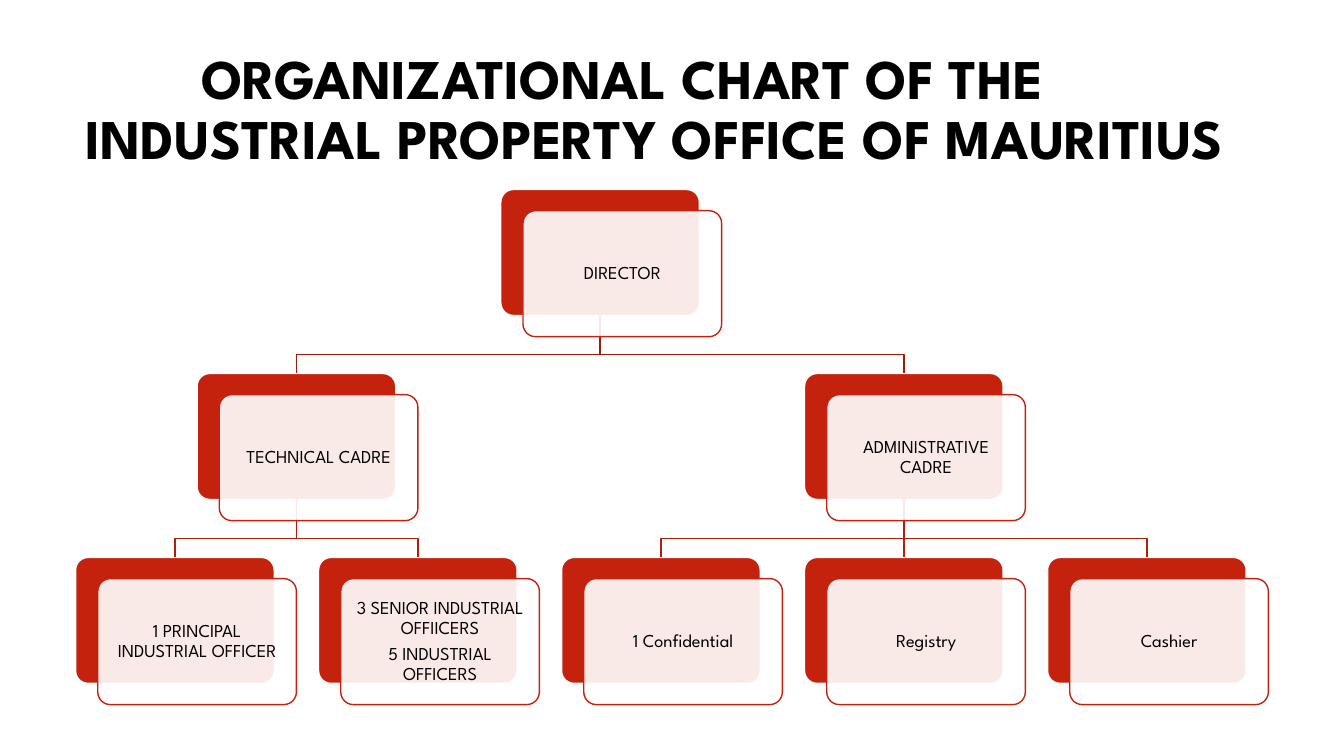
import pptx
import pptx.util
import pptx.dml.color
import pptx.enum.shapes
import pptx.enum.text
import pptx.oxml
import pptx.oxml.ns
import lxml.etree

Inches = pptx.util.Inches
Pt = pptx.util.Pt

# Content
TITLE = "ORGANIZATIONAL CHART OF THE INDUSTRIAL PROPERTY OFFICE OF MAURITIUS"
# key: (column, row, parent, paragraphs)
POSTS = {
    "head": (1.75, 0, None, ["DIRECTOR"]),
    "tech": (0.5, 1, "head", ["TECHNICAL CADRE"]),
    "chief": (0, 2, "tech", ["1 PRINCIPAL INDUSTRIAL OFFICER"]),
    "staff": (1, 2, "tech", ["3 SENIOR INDUSTRIAL OFFIICERS",
                             "5 INDUSTRIAL OFFICERS"]),
    "admin": (3, 1, "head", ["ADMINISTRATIVE CADRE"]),
    "aide": (2, 2, "admin", ["1 Confidential"]),
    "desk": (3, 2, "admin", ["Registry"]),
    "cash": (4, 2, "admin", ["Cashier"]),
}
COLORS = {"card": "C4220D", "white": "FFFFFF", "text": "000000",
          "top": "9D1B0A", "low": "B21F0C"}
FONT = "League Spartan"

# Grid in inches
LEFT, TOP = 0.75, 1.88
STEP_X, STEP_Y = 2.41, 1.825
WIDE, HIGH = 1.97, 1.25
SHIFT_X, SHIFT_Y = 0.22, 0.21
BEND = 0.39


def color(name):
    return pptx.dml.color.RGBColor.from_string(COLORS[name])


def place(key):
    col, row = POSTS[key][:2]
    return LEFT + col * STEP_X, TOP + row * STEP_Y


def write(para, text, size, bold=False):
    para.line_spacing = 0.9
    run = para.add_run()
    run.text = text
    run.font.name = FONT
    run.font.size = Pt(size)
    run.font.bold = bold
    run.font.color.rgb = color("text")


def add_card(x, y, fill, line):
    card = slide.shapes.add_shape(
        pptx.enum.shapes.MSO_SHAPE.ROUNDED_RECTANGLE,
        Inches(x), Inches(y), Inches(WIDE), Inches(HIGH))
    card.adjustments[0] = 0.1
    card.shadow.inherit = False
    card.fill.solid()
    card.fill.fore_color.rgb = color(fill)
    card.line.color.rgb = color(line)
    card.line.width = Pt(1)
    return card


def add_link(parent, child):
    (x1, y1), (x2, y2) = place(parent), place(child)
    x1, x2, y1 = x1 + WIDE / 2, x2 + WIDE / 2, y1 + HIGH
    if x1 == x2:
        link = slide.shapes.add_connector(
            pptx.enum.shapes.MSO_CONNECTOR.STRAIGHT,
            Inches(x1), Inches(y1), Inches(x2), Inches(y2))
        link.begin_connect(backs[parent], 2)
        link.end_connect(backs[child], 0)
        props = link._element.spPr
        lxml.etree.SubElement(props, pptx.oxml.ns.qn("a:effectLst"))
    else:
        pen = slide.shapes.build_freeform(Inches(x1), Inches(y1))
        turns = [(x1, y1 + BEND), (x2, y1 + BEND), (x2, y2)]
        pen.add_line_segments([(Inches(x), Inches(y)) for x, y in turns],
                              close=False)
        link = pen.convert_to_shape()
        link.shadow.inherit = False
        link.fill.background()
    link.line.color.rgb = color("low" if POSTS[parent][1] else "top")
    link.line.width = Pt(1)


deck = pptx.Presentation()
deck.slide_width, deck.slide_height = Inches(13.33), Inches(7.5)
slide = deck.slides.add_slide(deck.slide_layouts[6])

# Title, first line indented
box = slide.shapes.add_textbox(Inches(0.75), Inches(0.35),
                               Inches(11.83), Inches(1.51))
frame = box.text_frame
frame.word_wrap = True
frame.vertical_anchor = pptx.enum.text.MSO_ANCHOR.MIDDLE
para = frame.paragraphs[0]
props = para._p.get_or_add_pPr()
props.set("marL", "0")
props.set("indent", str(Inches(1.15)))
write(para, TITLE, 40, True)

# Red cards at the back
backs = {key: add_card(*place(key), "card", "white") for key in POSTS}

# Links between posts
for key, post in POSTS.items():
    if post[2]:
        add_link(post[2], key)

# Pale cards with text in front
for key, post in POSTS.items():
    x, y = place(key)
    card = add_card(x + SHIFT_X, y + SHIFT_Y, "white", "card")
    tint = card._element.spPr.find(".//" + pptx.oxml.ns.qn("a:srgbClr"))
    lxml.etree.SubElement(tint, pptx.oxml.ns.qn("a:alpha"), val="90000")
    frame = card.text_frame
    frame.word_wrap = True
    frame.vertical_anchor = pptx.enum.text.MSO_ANCHOR.MIDDLE
    frame.margin_left = frame.margin_right = Inches(0.05)
    frame.margin_top = frame.margin_bottom = Inches(0.05)
    for i, text in enumerate(post[3]):
        para = frame.add_paragraph() if i else frame.paragraphs[0]
        para.alignment = pptx.enum.text.PP_ALIGN.CENTER
        para.space_after = Pt(4.5)
        write(para, text, 13)

deck.save("out.pptx")
